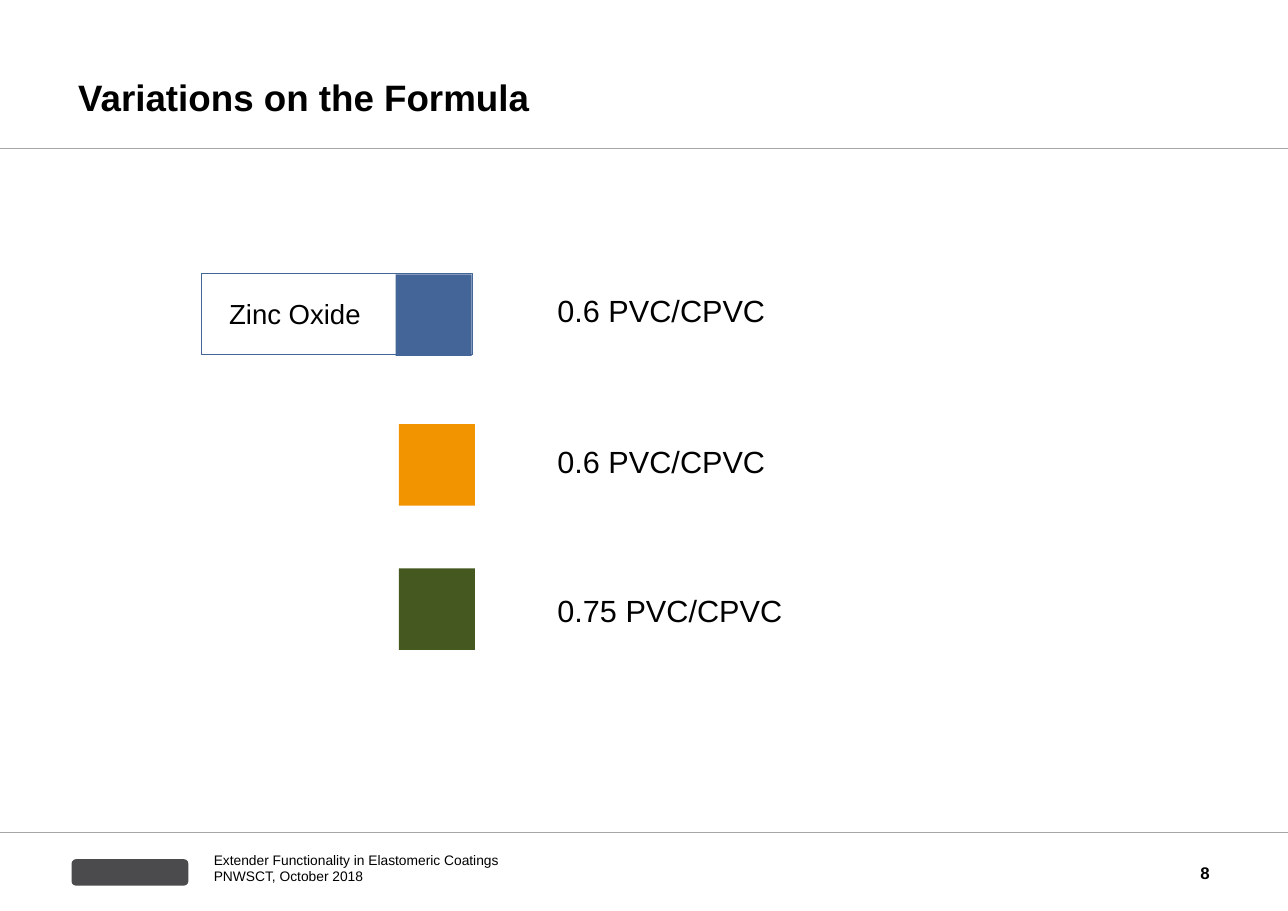
import dataclasses

import pptx
import pptx.dml.color
import pptx.enum.shapes
import pptx.enum.text
import pptx.oxml
import pptx.oxml.ns
import pptx.util

SHAPE = pptx.enum.shapes.MSO_SHAPE
ANCHOR = pptx.enum.text.MSO_ANCHOR
ALIGN = pptx.enum.text.PP_ALIGN
PAGE_WIDTH, PAGE_HEIGHT = 1169, 827


@dataclasses.dataclass(frozen=True)
class Theme:
    font: str = "Arial"
    ink: str = "000000"
    rule: str = "A6A6A6"
    logo: str = "4B4B4D"
    blue: str = "436597"
    orange: str = "F29400"
    green: str = "445820"
    title_size: int = 24
    label_size: int = 20
    tag_size: int = 18
    number_size: int = 11
    footer_size: int = 9


THEME = Theme()


def px(length):
    """Turn px, at 100 to the inch, into EMU."""
    return pptx.util.Emu(length * 9144)


def color(code):
    return pptx.dml.color.RGBColor.from_string(code)


def write(shape, text, size, anchor=ANCHOR.TOP, align=ALIGN.LEFT,
          insets=(0, 0, 0, 0), bold=False, spacing=None):
    frame = shape.text_frame
    frame.text = text
    frame.word_wrap = True
    frame.auto_size = pptx.enum.text.MSO_AUTO_SIZE.NONE
    frame.vertical_anchor = anchor
    (frame.margin_left, frame.margin_top,
     frame.margin_right, frame.margin_bottom) = map(px, insets)
    for para in frame.paragraphs:
        para.alignment = align
        para.line_spacing = spacing
        for span in para.runs:
            span.font.name = THEME.font
            span.font.size = pptx.util.Pt(size)
            span.font.bold = bold
            span.font.color.rgb = color(THEME.ink)


def add_text(page, box, text, size, **style):
    write(page.shapes.add_textbox(*map(px, box)), text, size, **style)


def add_block(page, box, fill=None, line=None, kind=SHAPE.RECTANGLE):
    block = page.shapes.add_shape(kind, *map(px, box))
    block.shadow.inherit = False
    if fill:
        block.fill.solid()
        block.fill.fore_color.rgb = color(fill)
    else:
        block.fill.background()
    if line:
        block.line.color.rgb = color(line)
        block.line.width = pptx.util.Pt(0.75)
    else:
        block.line.fill.background()
    return block


def add_rule(page, top, weight):
    """Draw a hairline across the whole page."""
    rule = page.shapes.add_connector(
        pptx.enum.shapes.MSO_CONNECTOR.STRAIGHT,
        px(0), px(top), px(PAGE_WIDTH), px(top))
    rule.line.color.rgb = color(THEME.rule)
    rule.line.width = pptx.util.Pt(weight)
    properties = rule.element.find(pptx.oxml.ns.qn("p:spPr"))
    properties.append(pptx.oxml.parse_xml(
        f"<a:effectLst {pptx.oxml.ns.nsdecls('a')}/>"))


def add_header(page, box):
    left, top, width, height = box
    title = page.shapes.title
    title.left, title.top, title.width, title.height = map(px, box)
    write(title, "Variations on the Formula", THEME.title_size,
          anchor=ANCHOR.BOTTOM, bold=True)
    add_rule(page, top + height + 27, 0.75)


def add_variation(page, box, fill, label, label_drop):
    """Place a colour swatch with its ratio to the right."""
    left, top, width, height = box
    add_block(page, (left, top, 69, height), fill)
    label_left = 495
    add_text(page, (label_left, top + label_drop, left + width - label_left, 52),
             label, THEME.label_size, insets=(11, 6, 11, 6))


def add_zinc_tag(page, box):
    tag = add_block(page, box, line=THEME.blue)
    write(tag, "Zinc Oxide", THEME.tag_size, anchor=ANCHOR.MIDDLE,
          insets=(25, 6, 11, 6))


def add_footer(page, box):
    left, top, width, height = box
    add_rule(page, top, 0.5)
    add_block(page, (left, top + 24, 106, 24), THEME.logo,
              kind=SHAPE.ROUNDED_RECTANGLE)
    add_text(page, (left + 129, top + 17, 491, 31),
             "Extender Functionality in Elastomeric Coatings\n"
             "PNWSCT, October 2018", THEME.footer_size,
             anchor=ANCHOR.MIDDLE, spacing=pptx.util.Pt(10.4))
    add_text(page, (left + width - 89, top + 13, 89, 47), "8",
             THEME.number_size, anchor=ANCHOR.MIDDLE, align=ALIGN.RIGHT,
             bold=True)


def main():
    deck = pptx.Presentation()
    deck.slide_width, deck.slide_height = px(PAGE_WIDTH), px(PAGE_HEIGHT)
    page = deck.slides.add_slide(deck.slide_layouts.get_by_name("Title Only"))
    add_header(page, (71, 21, 1027, 87))
    variations = [
        (359, 249, THEME.blue, "0.6 PVC/CPVC", 10),
        (362, 385, THEME.orange, "0.6 PVC/CPVC", 11),
        (362, 516, THEME.green, "0.75 PVC/CPVC", 15),
    ]
    for left, top, fill, label, label_drop in variations:
        add_variation(page, (left, top, 440, 74), fill, label, label_drop)
    add_zinc_tag(page, (183, 248, 246, 74))
    add_footer(page, (65, 756, 1033, 71))
    deck.save("out.pptx")


if __name__ == "__main__":
    main()
